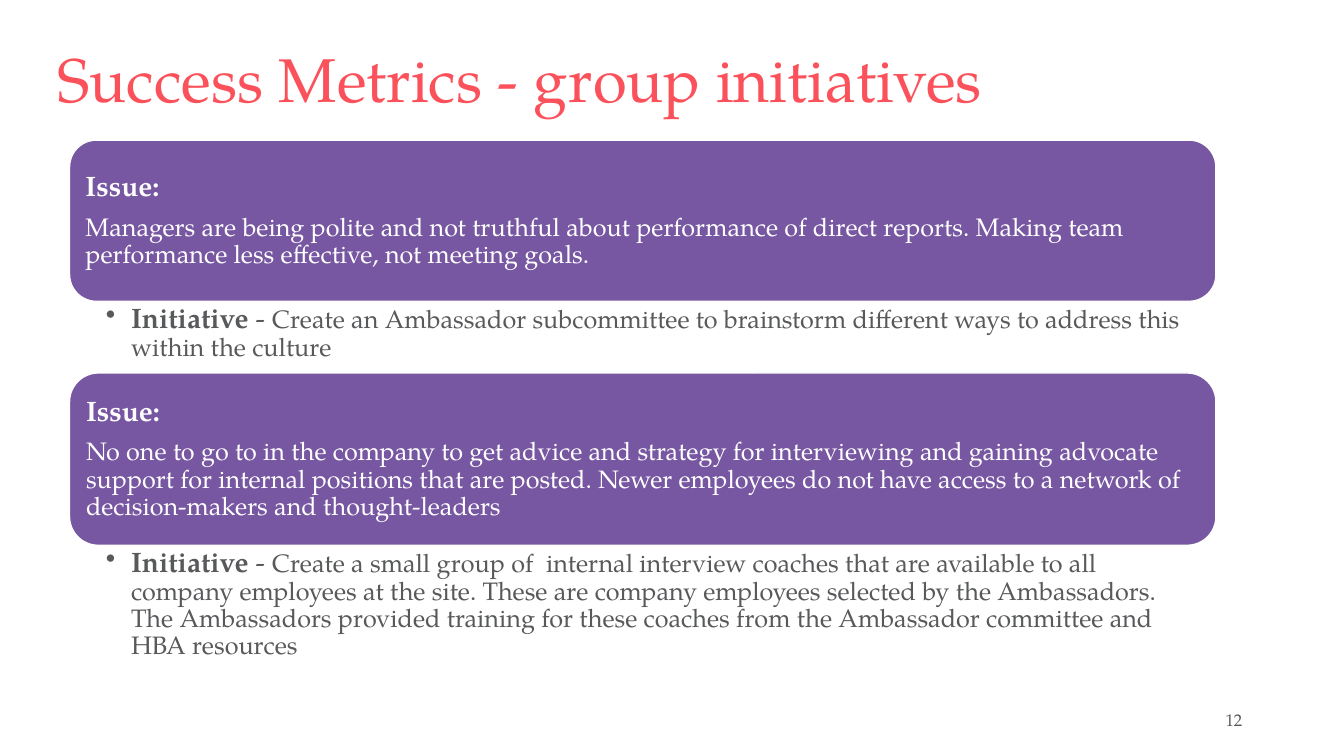
from dataclasses import dataclass

from lxml.etree import SubElement
from pptx import Presentation
from pptx.dml.color import RGBColor
from pptx.enum.shapes import MSO_SHAPE as Preset
from pptx.enum.text import MSO_ANCHOR as Anchor, MSO_AUTO_SIZE as AutoSize, PP_ALIGN as Align
from pptx.oxml.ns import qn
from pptx.slide import Slide
from pptx.text.text import TextFrame
from pptx.util import Inches, Pt

FONT = "TeX Gyre Pagella"
COLORS = {"title": "FB515B", "panel": "7757A1", "white": "FFFFFF", "body": "58595B"}
LEFT, WIDTH = 0.69, 11.37


@dataclass
class Run:
    text: str
    size: int
    color: str
    bold: bool = False


@dataclass
class Block:
    top: float
    panel_height: float
    initiative_height: float
    issue: str
    initiative: str


BLOCKS = [
    Block(
        1.39, 1.6, 0.71,
        "Managers are being polite and not truthful about performance of direct reports. "
        "Making team performance less effective, not meeting goals.",
        "Create an Ambassador subcommittee to brainstorm different ways to address this "
        "within the culture",
    ),
    Block(
        3.7, 1.71, 1.32,
        "No one to go to in the company to get advice and strategy for interviewing and "
        "gaining advocate support for internal positions that are posted. Newer employees "
        "do not have access to a network of decision-makers and thought-leaders",
        "Create a small group of  internal interview coaches that are available to all "
        "company employees at the site. These are company employees selected by the "
        "Ambassadors. The Ambassadors provided training for these coaches from the "
        "Ambassador committee and HBA resources",
    ),
]


def rgb(name: str) -> RGBColor:
    return RGBColor.from_string(COLORS[name])


def set_frame(frame: TextFrame, anchor: Anchor, margins: tuple) -> None:
    left, top, right, bottom = map(Inches, margins)
    settings = {
        "word_wrap": True, "auto_size": AutoSize.NONE, "vertical_anchor": anchor,
        "margin_left": left, "margin_top": top, "margin_right": right, "margin_bottom": bottom,
    }
    for name, value in settings.items():
        setattr(frame, name, value)


def write(frame: TextFrame, paragraphs: list[list[Run]], align: Align = Align.LEFT,
          space_after: float = 0, bullet: bool = False) -> None:
    for index, runs in enumerate(paragraphs):
        paragraph = frame.add_paragraph() if index else frame.paragraphs[0]
        settings = {"alignment": align, "line_spacing": 0.9,
                    "space_before": Pt(0), "space_after": Pt(space_after)}
        for name, value in settings.items():
            setattr(paragraph, name, value)
        if bullet:
            paragraph.level = 1
            properties = paragraph._p.get_or_add_pPr()
            properties.set("marL", str(Inches(0.25)))
            properties.set("indent", str(-Inches(0.25)))
            SubElement(properties, qn("a:buChar"), char="•")
        for part in runs:
            run = paragraph.add_run()
            run.text = part.text
            style = {"name": FONT, "size": Pt(part.size), "bold": part.bold}
            for name, value in style.items():
                setattr(run.font, name, value)
            run.font.color.rgb = rgb(part.color)


def add_block(slide: Slide, block: Block) -> None:
    panel = slide.shapes.add_shape(
        Preset.ROUNDED_RECTANGLE, Inches(LEFT), Inches(block.top),
        Inches(WIDTH), Inches(block.panel_height))
    panel.shadow.inherit = False
    panel.fill.solid()
    panel.fill.fore_color.rgb = rgb("panel")
    panel.line.color.rgb = rgb("white")
    panel.line.width = Pt(1)
    set_frame(panel.text_frame, Anchor.MIDDLE, (0.08, 0.08, 0.08, 0.08))
    write(panel.text_frame, [[Run("Issue:", 20, "white", True)],
                             [Run(block.issue, 18, "white")]], space_after=8)

    initiative = slide.shapes.add_textbox(
        Inches(LEFT), Inches(block.top + block.panel_height),
        Inches(WIDTH), Inches(block.initiative_height))
    set_frame(initiative.text_frame, Anchor.TOP, (0.36, 0.03, 0.16, 0.03))
    write(initiative.text_frame, [[Run("Initiative", 20, "body", True), Run(" - ", 20, "body"),
                                   Run(block.initiative, 18, "body")]],
          space_after=4, bullet=True)


def add_title(slide: Slide, text: str) -> None:
    title = slide.shapes.title
    place = {"left": 0.47, "top": 0.02, "width": 12.4, "height": 1.59}
    for name, value in place.items():
        setattr(title, name, Inches(value))
    set_frame(title.text_frame, Anchor.MIDDLE, (0.1, 0.05, 0.1, 0.05))
    write(title.text_frame, [[Run(text, 44, "title")]])


def add_page_number(slide: Slide, number: str) -> None:
    box = slide.shapes.add_textbox(Inches(9.42), Inches(6.95), Inches(3), Inches(0.4))
    set_frame(box.text_frame, Anchor.MIDDLE, (0.1, 0.05, 0.1, 0.05))
    write(box.text_frame, [[Run(number, 12, "body")]], align=Align.RIGHT)


def main() -> None:
    presentation = Presentation()
    presentation.slide_width = Inches(13.33)
    presentation.slide_height = Inches(7.5)
    slide = presentation.slides.add_slide(presentation.slide_layouts.get_by_name("Title Only"))
    add_title(slide, "Success Metrics - group initiatives")
    for block in BLOCKS:
        add_block(slide, block)
    add_page_number(slide, "12")
    presentation.save("out.pptx")


if __name__ == "__main__":
    main()
